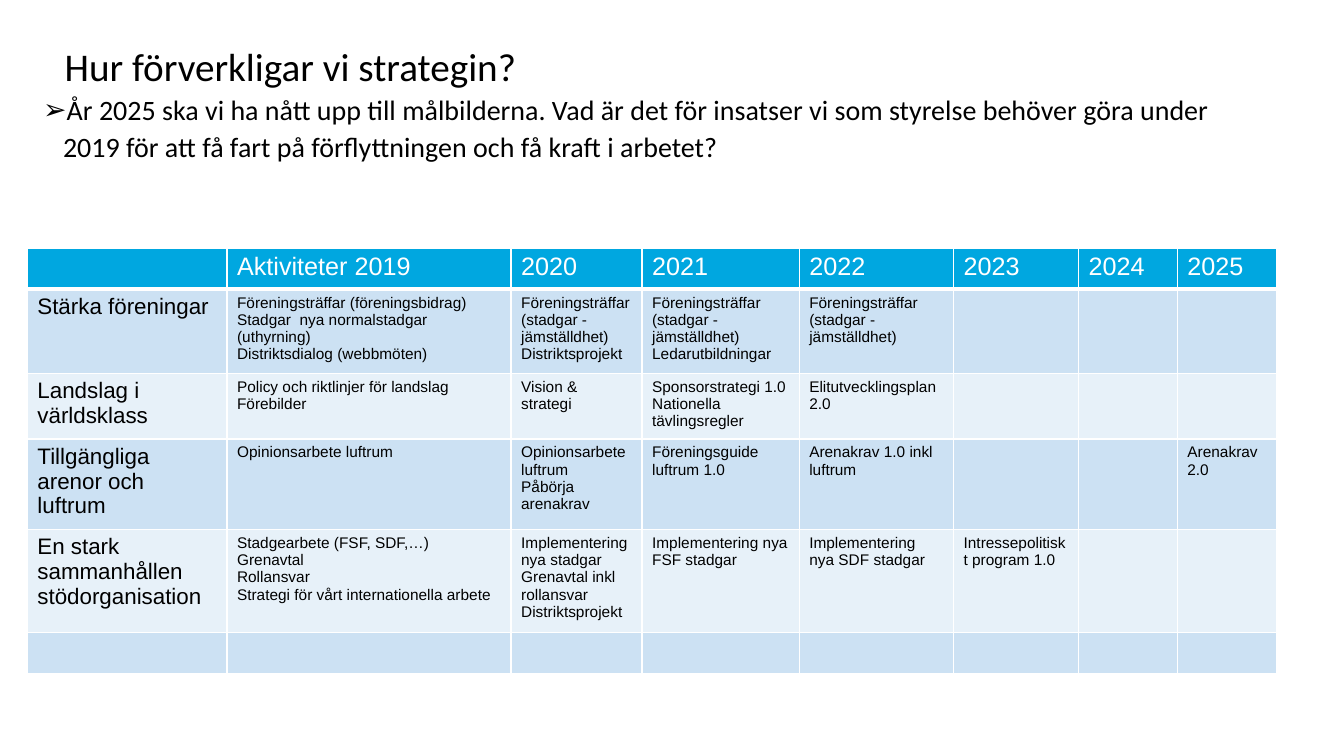
from lxml import etree
from pptx import Presentation
from pptx.dml.color import RGBColor
from pptx.enum.text import MSO_ANCHOR
from pptx.oxml.ns import qn
from pptx.util import Cm, Pt

TOP, BOTTOM = MSO_ANCHOR.TOP, MSO_ANCHOR.BOTTOM

COLORS = {"ink": "000000", "white": "FFFFFF", "head": "00A7E0",
          "dark": "CCE1F3", "light": "E7F1F9"}

WIDTHS = [5.03, 7.16, 3.3, 3.96, 3.89, 3.15, 2.49, 2.49]
HEIGHT = 1.04

MEETING = "Föreningsträffar (stadgar - jämställdhet)"
ROWS = [
    ["", "Aktiviteter 2019", "2020", "2021", "2022", "2023", "2024", "2025"],
    ["Stärka föreningar",
     "Föreningsträffar (föreningsbidrag)\n"
     "Stadgar  nya normalstadgar (uthyrning)\n"
     "Distriktsdialog (webbmöten)",
     MEETING + "\nDistriktsprojekt",
     MEETING + "\nLedarutbildningar",
     MEETING, "", "", ""],
    ["Landslag i världsklass",
     "Policy och riktlinjer för landslag\nFörebilder",
     "Vision & strategi",
     "Sponsorstrategi 1.0\nNationella tävlingsregler",
     "Elitutvecklingsplan 2.0", "", "", ""],
    ["Tillgängliga arenor och luftrum",
     "Opinionsarbete luftrum",
     "Opinionsarbete luftrum\nPåbörja arenakrav",
     "Föreningsguide luftrum 1.0",
     "Arenakrav 1.0 inkl luftrum", "", "", "Arenakrav 2.0"],
    ["En stark sammanhållen stödorganisation",
     "Stadgearbete (FSF, SDF,…)\nGrenavtal\nRollansvar\n"
     "Strategi för vårt internationella arbete",
     "Implementering nya stadgar\nGrenavtal inkl rollansvar\nDistriktsprojekt",
     "Implementering nya FSF stadgar",
     "Implementering nya SDF stadgar",
     "Intressepolitiskt program 1.0", "", ""],
    [""] * len(WIDTHS),
]


class Deck:
    """Holds the style and the current slide."""

    def __init__(self, slide):
        self.slide = slide

    def style(self, frame, size, font, color):
        for para in frame.paragraphs:
            for run in para.runs:
                run.font.size = Pt(size)
                run.font.name = font
                run.font.color.rgb = RGBColor.from_string(COLORS[color])

    def text(self, words, left, top, width, height, size, anchor, spacing):
        box = self.slide.shapes.add_textbox(Cm(left), Cm(top), Cm(width), Cm(height))
        frame = box.text_frame
        frame.word_wrap = True
        frame.vertical_anchor = anchor
        frame.margin_left = frame.margin_right = 0
        frame.margin_top = frame.margin_bottom = 0
        frame.text = words
        self.style(frame, size, "Calibri", "ink")
        para = frame.paragraphs[0]
        para.line_spacing = spacing
        return para

    def bullet(self, para, sign, indent):
        para.space_before, para.space_after = Pt(10), Pt(6)
        props = para._p.get_or_add_pPr()
        props.set("marL", str(Cm(indent)))
        props.set("indent", str(-Cm(indent)))
        etree.SubElement(props, qn("a:buFont")).set("typeface", "Arial")
        etree.SubElement(props, qn("a:buChar")).set("char", sign)

    def border(self, cell, side, points):
        line = etree.SubElement(cell._tc.get_or_add_tcPr(), qn("a:ln" + side))
        line.set("w", str(Pt(points)))
        fill = etree.SubElement(line, qn("a:solidFill"))
        etree.SubElement(fill, qn("a:srgbClr")).set("val", COLORS["white"])

    def cell(self, cell, words, size, color, fill, base):
        cell.text_frame.text = words
        self.style(cell.text_frame, size, "Arial", color)
        for side in "LRTB":
            self.border(cell, side, base if side == "B" else 1)
        cell.fill.solid()
        cell.fill.fore_color.rgb = RGBColor.from_string(COLORS[fill])

    def table(self, rows, left, top, widths, height):
        table = self.slide.shapes.add_table(
            len(rows), len(widths), Cm(left), Cm(top),
            Cm(sum(widths)), Cm(height * len(rows))).table
        for col, width in zip(table.columns, widths):
            col.width = Cm(width)
        for r, row in enumerate(rows):
            table.rows[r].height = Cm(height)
            for c, words in enumerate(row):
                if r == 0:
                    look = 18, "white", "head", 3
                else:
                    look = 11 if c else 16, "ink", "dark" if r % 2 else "light", 1
                self.cell(table.cell(r, c), words, *look)


def main():
    prs = Presentation()
    prs.slide_width, prs.slide_height = Cm(33.87), Cm(19.05)
    deck = Deck(prs.slides.add_slide(prs.slide_layouts[6]))

    # Title and question
    deck.text("Hur förverkligar vi strategin?",
              1.63, 0.58, 30.5, 1.68, 28, BOTTOM, 0.9)
    goal = deck.text(
        "År 2025 ska vi ha nått upp till målbilderna. Vad är det för insatser "
        "vi som styrelse behöver göra under 2019 för att få fart på "
        "förflyttningen och få kraft i arbetet?",
        1.09, 2.26, 30.5, 4.24, 20, TOP, 1.1)
    deck.bullet(goal, "➢", 0.5)

    # Plan by year
    deck.table(ROWS, 0.69, 6.25, WIDTHS, HEIGHT)

    prs.save("out.pptx")


if __name__ == "__main__":
    main()
